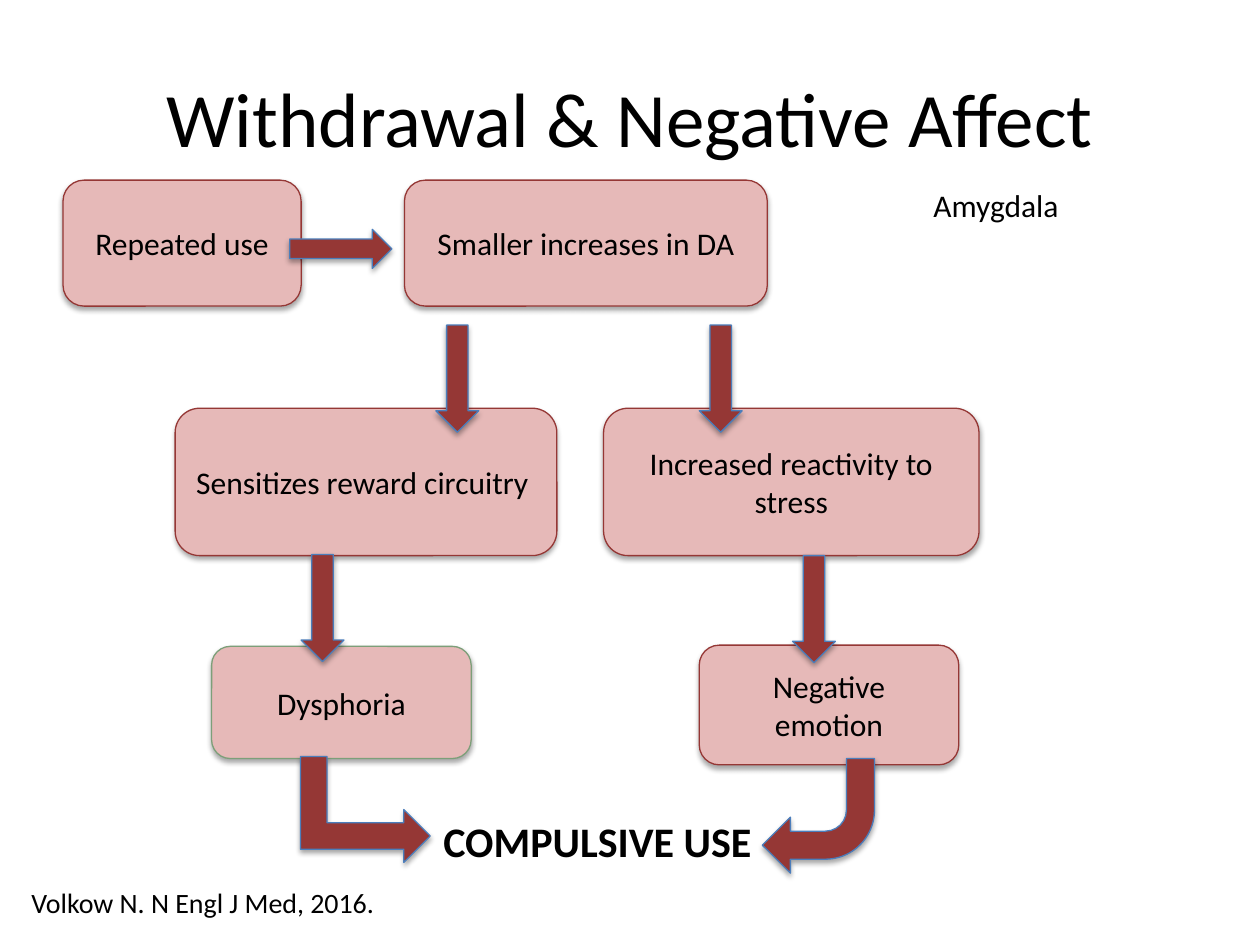
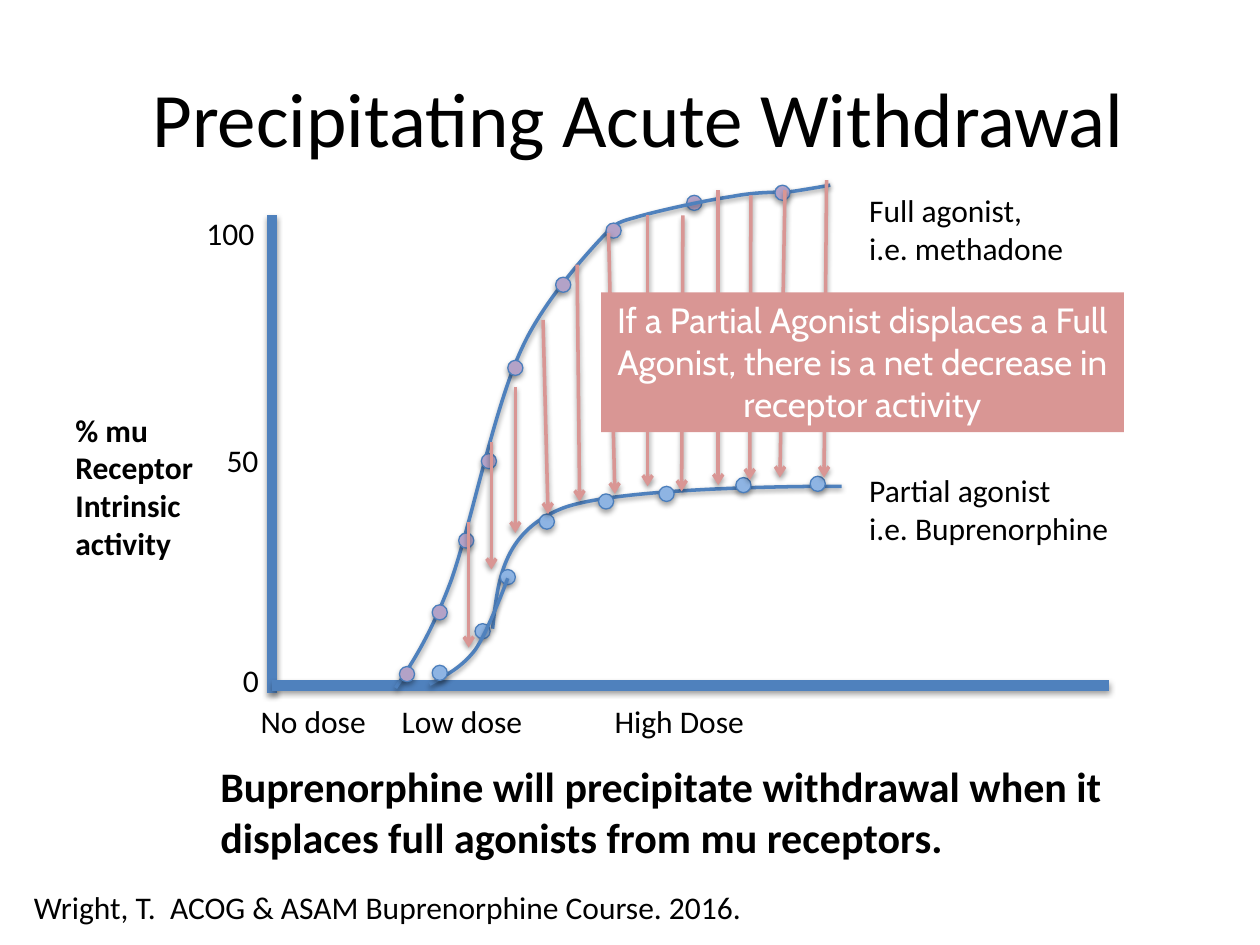
from dataclasses import dataclass

from lxml import etree
from pptx import Presentation
from pptx.dml.color import RGBColor
from pptx.enum.shapes import MSO_CONNECTOR, MSO_SHAPE
from pptx.enum.text import MSO_ANCHOR, MSO_AUTO_SIZE, PP_ALIGN
from pptx.oxml.ns import qn
from pptx.util import Inches, Pt

BOX, RECT, DOT = MSO_SHAPE.ROUNDED_RECTANGLE, MSO_SHAPE.RECTANGLE, MSO_SHAPE.OVAL
RIGHT, DOWN = MSO_SHAPE.RIGHT_ARROW, MSO_SHAPE.DOWN_ARROW
BEND_UP, BEND = MSO_SHAPE.BENT_UP_ARROW, MSO_SHAPE.BENT_ARROW
LINE = MSO_CONNECTOR.STRAIGHT
MID, TOP = MSO_ANCHOR.MIDDLE, MSO_ANCHOR.TOP
MIDST, LEFT = PP_ALIGN.CENTER, PP_ALIGN.LEFT
GROW = MSO_AUTO_SIZE.SHAPE_TO_FIT_TEXT

COLORS = {
    "ink": "000000", "white": "FFFFFF", "pink": "E6B9B8", "rose": "D99694",
    "wine": "953735", "sage": "7D9F79", "edge": "4B7EBC", "blue": "4F81BD",
    "sky": "8EB4E3", "mauve": "B3A2C7",
}
FONT = {"name": "Calibri", "size": Pt(18), "bold": False}
HEAD = {**FONT, "size": Pt(44)}
BOLD = {**FONT, "bold": True}
CLAIM = {**BOLD, "size": Pt(24)}
SMALL = {**FONT, "size": Pt(16)}
BANNER = {**FONT, "name": "Cabin", "size": Pt(20)}
DOT_SIZE = 0.12


@dataclass
class Block:
    kind: int
    x: float
    y: float
    w: float
    h: float
    text: str = ""
    fill: str = "pink"
    edge: str = "wine"
    turn: int = 0


@dataclass
class Label:
    x: float
    y: float
    w: float
    h: float
    text: str
    font: dict
    wrap: bool = False
    tabs: tuple[float, ...] = ()


@dataclass
class Link:
    x1: float
    y1: float
    x2: float
    y2: float
    color: str = "rose"
    width: float = 2
    arrow: bool = True


@dataclass
class Layer:
    curves: list[list[tuple[float, float]]]
    dots: dict[str, list[tuple[float, float]]]


def rgb(name: str) -> RGBColor:
    return RGBColor.from_string(COLORS[name])


def shade(shape, alpha: int, dist: float) -> None:
    effect = etree.SubElement(shape._element.spPr, qn("a:effectLst"))
    cast = etree.SubElement(effect, qn("a:outerShdw"), blurRad=str(Pt(3.1)),
                            dist=str(Pt(dist)), dir="5400000", rotWithShape="0")
    tint = etree.SubElement(cast, qn("a:srgbClr"), val=COLORS["ink"])
    etree.SubElement(tint, qn("a:alpha"), val=str(alpha * 1000))


def stroke(shape, color: str, width: float) -> None:
    shape.line.color.rgb = rgb(color)
    shape.line.width = Pt(width)


def write(frame, text: str, font: dict, align=LEFT, color: str = "ink", **form) -> None:
    for key, value in form.items():
        setattr(frame, key, value)
    for index, words in enumerate(text.split("\n")):
        para = frame.add_paragraph() if index else frame.paragraphs[0]
        para.alignment = align
        run = para.add_run()
        run.text = words
        for key, value in font.items():
            setattr(run.font, key, value)
        run.font.color.rgb = rgb(color)


def place(shape, x: float, y: float, w: float, h: float) -> None:
    for key, value in {"left": x, "top": y, "width": w, "height": h}.items():
        setattr(shape, key, Inches(value))


def start(deck, title: str):
    slide = deck.slides.add_slide(deck.slide_layouts[5])
    head = slide.shapes.title
    place(head, 0.5, 0.3, 9, 1.25)
    write(head.text_frame, title, HEAD, MIDST, vertical_anchor=MID, word_wrap=True)
    return slide


def draw_block(slide, block: Block) -> None:
    shape = slide.shapes.add_shape(
        block.kind, *map(Inches, (block.x, block.y, block.w, block.h)))
    shape.rotation = block.turn
    shape.fill.solid()
    shape.fill.fore_color.rgb = rgb(block.fill)
    stroke(shape, block.edge, 0.75)
    shade(shape, 35, 1.8)
    if block.text:
        write(shape.text_frame, block.text, FONT, MIDST,
              vertical_anchor=MID, word_wrap=True)


def draw_label(slide, label: Label) -> None:
    box = slide.shapes.add_textbox(
        *map(Inches, (label.x, label.y, label.w, label.h)))
    write(box.text_frame, label.text, label.font,
          word_wrap=label.wrap, auto_size=GROW)
    if label.tabs:
        props = box.text_frame.paragraphs[0]._p.get_or_add_pPr()
        stops = etree.SubElement(props, qn("a:tabLst"))
        for stop in label.tabs:
            etree.SubElement(stops, qn("a:tab"), pos=str(Inches(stop)), algn="l")


def draw_link(slide, link: Link) -> None:
    line = slide.shapes.add_connector(
        LINE, *map(Inches, (link.x1, link.y1, link.x2, link.y2)))
    stroke(line, link.color, link.width)
    if link.arrow:
        etree.SubElement(line.line._get_or_add_ln(), qn("a:tailEnd"), type="arrow")
    shade(line, 38, 1.6)


def draw_curve(slide, knots: list[tuple[float, float]]) -> None:
    pen = slide.shapes.build_freeform(*map(Inches, knots[0]))
    pen.add_line_segments(
        [(Inches(x), Inches(y)) for x, y in knots[1:]], close=False)
    shape = pen.convert_to_shape()
    trace = shape._element.spPr.find(".//" + qn("a:path"))
    legs = trace.findall(qn("a:lnTo"))
    for i in range(0, len(legs), 3):
        cubic = etree.SubElement(trace, qn("a:cubicBezTo"))
        for leg in legs[i:i + 3]:
            cubic.append(leg[0])
            trace.remove(leg)
    shape.fill.background()
    stroke(shape, "blue", 2)
    shade(shape, 38, 1.6)


def draw_banner(slide) -> None:
    shape = slide.shapes.add_shape(RECT, *map(Inches, (4.77, 2.32, 4.15, 1.11)))
    shape.shadow.inherit = False
    shape.fill.solid()
    shape.fill.fore_color.rgb = rgb("rose")
    shape.line.fill.background()
    write(shape.text_frame,
          "If a Partial Agonist displaces a Full Agonist, "
          "there is a net decrease in receptor activity",
          BANNER, MIDST, "white", vertical_anchor=TOP, word_wrap=True)


def arrow(kind: int, x: float, y: float, w: float, h: float, turn: int = 0) -> Block:
    return Block(kind, x, y, w, h, fill="wine", edge="edge", turn=turn)


STAGES = [
    Block(BOX, 0.5, 1.43, 1.89, 1, "Repeated use"),
    Block(BOX, 3.21, 1.43, 2.88, 1, "Smaller increases in DA"),
    Block(BOX, 1.39, 3.24, 3.03, 1.17, "Sensitizes reward circuitry "),
    Block(BOX, 4.79, 3.24, 2.98, 1.17, "Increased reactivity to stress"),
    Block(BOX, 1.68, 5.13, 2.06, 0.89, "Dysphoria", edge="sage"),
    Block(BOX, 5.55, 5.12, 2.06, 0.95, "Negative emotion"),
]
DROPS = [(5.55, 2.58), (6.29, 4.41), (2.39, 4.4), (3.46, 2.58)]
TURNS = [
    arrow(RIGHT, 2.3, 1.82, 0.81, 0.31),
    arrow(BEND_UP, 2.48, 5.91, 0.84, 1.03, 90),
    arrow(BEND, 6.05, 6.02, 0.89, 0.91, 180),
]
FLOW_TEXT = [
    Label(3.42, 6.42, 2.67, 0.5, "COMPULSIVE USE", CLAIM),
    Label(0.15, 6.98, 2.98, 0.37, "Volkow N. N Engl J Med, 2016.", SMALL),
    Label(7.31, 1.43, 1.22, 0.4, "Amygdala", FONT),
]

AXES = [
    Link(2.16, 1.71, 2.16, 5.5, "blue", 6, False),
    Link(2.16, 5.44, 8.8, 5.44, "blue", 6, False),
]
LAYERS = [
    Layer(
        [[(3.91, 4.99), (3.95, 4.61), (3.99, 4.23), (4.45, 4.04),
          (4.91, 3.85), (6.68, 3.86), (6.68, 3.86)],
         [(3.14, 5.46), (3.27, 5.26), (3.41, 5.06), (3.58, 4.61), (3.74, 4.16),
          (3.92, 3.24), (4.14, 2.77), (4.35, 2.3), (4.87, 1.79), (4.87, 1.79)]],
        {"sky": [(3.77, 4.95), (3.97, 4.52), (4.28, 4.08), (4.75, 3.92),
                 (5.23, 3.86), (5.84, 3.79), (6.43, 3.78)],
         "mauve": [(3.43, 4.8), (3.64, 4.23), (3.82, 3.6), (4.03, 2.86),
                   (4.41, 2.2), (5.45, 1.55)]}),
    Layer(
        [[(3.41, 5.43), (3.54, 5.36), (3.66, 5.3), (3.77, 5.16),
          (3.87, 5.02), (4.03, 4.59), (4.03, 4.59)],
         [(4.86, 1.83), (4.87, 1.8), (4.87, 1.77), (5.03, 1.73), (5.19, 1.68),
          (5.6, 1.59), (5.81, 1.56), (6.02, 1.52), (6.16, 1.53), (6.29, 1.52),
          (6.42, 1.5), (6.59, 1.47), (6.59, 1.47)]],
        {"sky": [(3.43, 5.28)],
         "mauve": [(3.17, 5.29), (4.81, 1.77), (6.15, 1.47)]}),
]
FALLS = [
    (3.72, 4.14, 3.72, 5.14), (3.9, 3.51, 3.9, 4.52), (4.09, 3.07, 4.09, 4.23),
    (4.31, 2.54, 4.35, 4.08), (4.58, 2.1, 4.6, 3.98), (4.83, 1.85, 4.88, 3.92),
    (5.14, 1.71, 5.14, 3.86), (5.42, 1.71, 5.41, 3.9), (5.7, 1.51, 5.7, 3.85),
    (5.96, 1.55, 5.95, 3.81), (6.23, 1.51, 6.19, 3.79), (6.56, 1.43, 6.54, 3.79),
]
GRAPH_TEXT = [
    Label(6.8, 1.47, 1.76, 0.71, "Full agonist,\ni.e. methadone", FONT),
    Label(6.8, 3.69, 2.12, 0.71, "Partial agonist\ni.e. Buprenorphine", FONT),
    Label(0.5, 3.21, 1.15, 1.31, "% mu\nReceptor\nIntrinsic\nactivity", BOLD),
    Label(1.97, 5.52, 4.87, 0.4, "No dose\tLow dose\tHigh Dose", FONT,
          True, (1.12, 2.81)),
    Label(1.7, 3.45, 0.46, 0.4, "50", FONT),
    Label(1.54, 1.65, 0.59, 0.4, "100", FONT),
    Label(1.83, 5.2, 0.33, 0.4, "0", FONT),
    Label(1.65, 5.99, 7.27, 0.91,
          "Buprenorphine will precipitate withdrawal when it "
          "displaces full agonists from mu receptors.", CLAIM, True),
    Label(0.17, 7, 5.92, 0.4,
          "Wright, T.  ACOG & ASAM Buprenorphine Course. 2016.", FONT),
]


def make_flow(deck) -> None:
    slide = start(deck, "Withdrawal & Negative Affect")
    drops = [arrow(DOWN, x, y, 0.34, 0.85) for x, y in DROPS]
    for block in STAGES + drops + TURNS:
        draw_block(slide, block)
    for label in FLOW_TEXT:
        draw_label(slide, label)


def make_graph(deck) -> None:
    slide = start(deck, " Precipitating Acute Withdrawal")
    for axis in AXES:
        draw_link(slide, axis)
    for layer in LAYERS:
        for knots in layer.curves:
            draw_curve(slide, knots)
        for color, spots in layer.dots.items():
            for x, y in spots:
                draw_block(slide, Block(DOT, x, y, DOT_SIZE, DOT_SIZE,
                                        fill=color, edge="edge"))
    for ends in FALLS:
        draw_link(slide, Link(*ends))
    draw_banner(slide)
    for label in GRAPH_TEXT:
        draw_label(slide, label)


def main() -> None:
    deck = Presentation()
    deck.slide_width, deck.slide_height = Inches(10), Inches(7.5)
    make_flow(deck)
    make_graph(deck)
    deck.save("out.pptx")


if __name__ == "__main__":
    main()
